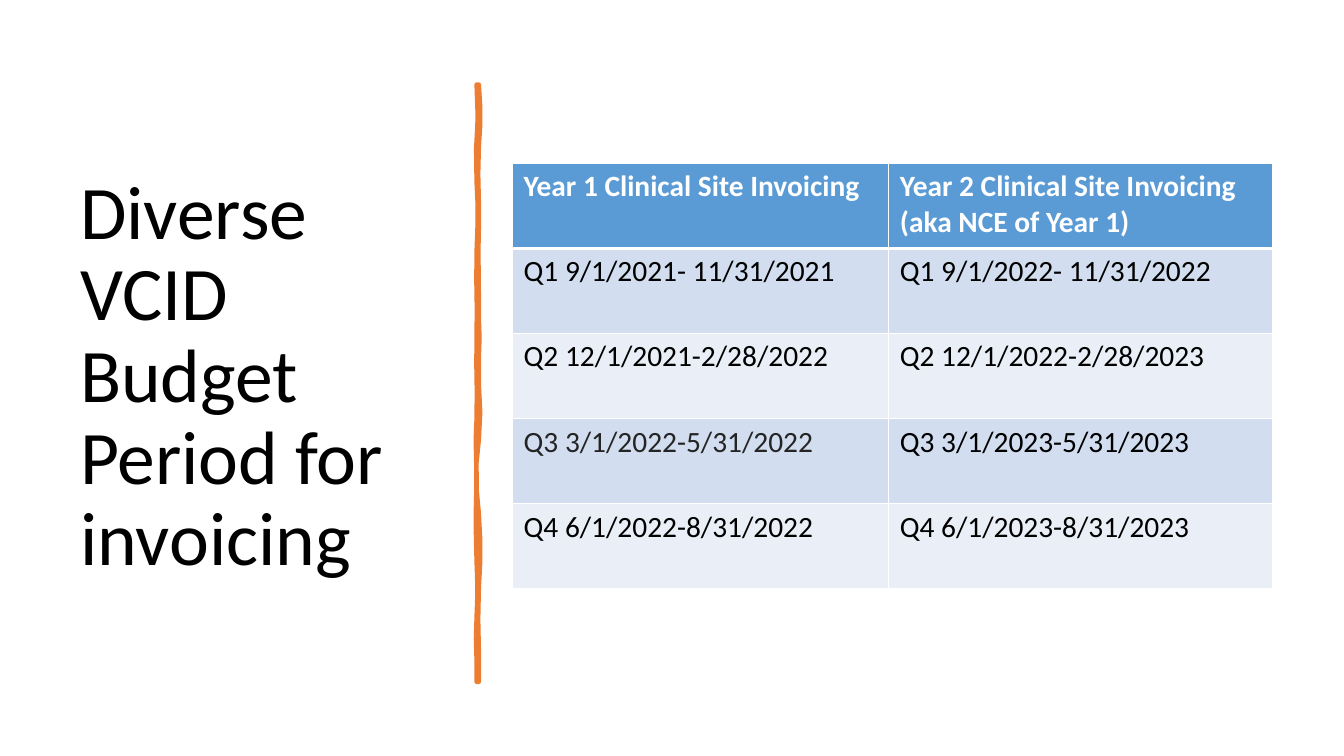
"""Build the Diverse VCID budget period slide with its invoicing calendar."""
from lxml import etree
from pptx import Presentation
from pptx.dml.color import RGBColor
from pptx.enum.text import MSO_ANCHOR
from pptx.oxml.ns import qn
from pptx.util import Pt

MIDDLE = MSO_ANCHOR.MIDDLE

THEME = {
    "font": "Calibri", "title_size": 54, "table_size": 21,
    "ink": "000000", "soft_ink": "242424", "white": "FFFFFF",
    "accent": "ED7D31", "header": "5B9BD5", "bands": ("D2DEEF", "EAEFF7"),
}

TITLE = "Diverse VCID Budget Period for invoicing"
CALENDAR = [
    ("Year 1 Clinical Site Invoicing", "Year 2 Clinical Site Invoicing (aka NCE of Year 1)"),
    ("Q1 9/1/2021- 11/31/2021", "Q1 9/1/2022- 11/31/2022"),
    ("Q2 12/1/2021-2/28/2022", "Q2 12/1/2022-2/28/2023"),
    ("Q3 3/1/2022-5/31/2022", "Q3 3/1/2023-5/31/2023"),
    ("Q4 6/1/2022-8/31/2022", "Q4 6/1/2023-8/31/2023"),
]
SOFT_CELL = (3, 0)

TITLE_BOX = (50.2, 50.1, 269.3, 439.9)
TABLE_LEFT, TABLE_TOP = 365.9, 116.7
COLUMN_WIDTHS = (268.7, 274.6)
ROW_HEIGHT = 60.75
CELL_INSETS = (8.2, 3.9)
RIGHT_EDGE, LEFT_EDGE, DIVIDER_TOP = 342, 340.5, 60.5
DIVIDER_WEIGHT = 3.25
CURVE_STEPS = 3

# Each wave is (first bend, second bend, end height).
DIVIDER_WAVES = {
    RIGHT_EDGE: [(1.4, 1.4, 105), (-1.4, 0.7, 163), (-0.7, 0, 212), (-0.7, 1.4, 256),
                 (-1.4, 2.9, 314), (-2.9, -2.2, 367), (1.4, 1.4, 420), (-1.4, 0.7, 487)],
    LEFT_EDGE: [(0.7, -1.4, 441), (0.7, 0.7, 401), (-0.7, -0.7, 343), (0, -1.4, 299),
                (0.7, -0.7, 241), (0.7, -0.7, 180), (0.7, 1.4, 130), (-2.2, 2.9, DIVIDER_TOP)],
}


def color(name):
    return RGBColor.from_string(name)


def add_run(paragraph, text, size, ink, bold=False):
    run = paragraph.add_run()
    run.text = text
    run.font.name = THEME["font"]
    run.font.size = Pt(size)
    run.font.bold = bold
    run.font.color.rgb = color(ink)


def add_title(slide):
    frame = slide.shapes.add_textbox(*map(Pt, TITLE_BOX)).text_frame
    frame.word_wrap = True
    frame.vertical_anchor = MIDDLE
    paragraph = frame.paragraphs[0]
    paragraph.line_spacing = 0.9
    add_run(paragraph, TITLE, THEME["title_size"], THEME["ink"])


def wavy_points(waves):
    points = []
    height = DIVIDER_TOP
    for edge, bends in waves.items():
        points.append((Pt(edge), Pt(height)))
        for first, second, end in bends:
            for step in range(1, CURVE_STEPS + 1):
                t = step / CURVE_STEPS
                sway = 3 * t * (1 - t) * ((1 - t) * first + t * second)
                points.append((Pt(edge + sway), Pt(height + (end - height) * t)))
            height = end
    return points


def add_divider(slide):
    start, *rest = wavy_points(DIVIDER_WAVES)
    builder = slide.shapes.build_freeform(*start)
    builder.add_line_segments(rest, close=True)
    divider = builder.convert_to_shape()
    divider.shadow.inherit = False
    divider.fill.solid()
    divider.fill.fore_color.rgb = color(THEME["accent"])
    divider.line.color.rgb = color(THEME["accent"])
    divider.line.width = Pt(DIVIDER_WEIGHT)
    etree.SubElement(divider.line._get_or_add_ln(), qn("a:round"))


def add_borders(cell, weights):
    properties = cell._tc.get_or_add_tcPr()
    for index, (side, weight) in enumerate(weights.items()):
        border = etree.Element(qn(f"a:{side}"), w=str(Pt(weight)))
        fill = etree.SubElement(border, qn("a:solidFill"))
        etree.SubElement(fill, qn("a:srgbClr"), val=THEME["white"])
        properties.insert(index, border)


def add_calendar(slide):
    rows, columns = len(CALENDAR), len(COLUMN_WIDTHS)
    calendar = slide.shapes.add_table(
        rows, columns, Pt(TABLE_LEFT), Pt(TABLE_TOP),
        Pt(sum(COLUMN_WIDTHS)), Pt(ROW_HEIGHT * rows)).table
    for column, width in zip(calendar.columns, COLUMN_WIDTHS):
        column.width = Pt(width)
    for row, labels in enumerate(CALENDAR):
        calendar.rows[row].height = Pt(ROW_HEIGHT)
        header = row == 0
        band = THEME["header"] if header else THEME["bands"][(row - 1) % 2]
        for column, label in enumerate(labels):
            cell = calendar.cell(row, column)
            cell.margin_left = cell.margin_right = Pt(CELL_INSETS[0])
            cell.margin_top = cell.margin_bottom = Pt(CELL_INSETS[1])
            cell.fill.solid()
            cell.fill.fore_color.rgb = color(band)
            add_borders(cell, {"lnL": 1, "lnR": 1, "lnT": 3 if row == 1 else 1,
                               "lnB": 3 if header else 1})
            body_ink = THEME["soft_ink"] if (row, column) == SOFT_CELL else THEME["ink"]
            add_run(cell.text_frame.paragraphs[0], label, THEME["table_size"],
                    THEME["white"] if header else body_ink, header)


def main():
    deck = Presentation()
    deck.slide_width, deck.slide_height = Pt(960), Pt(540)
    slide = deck.slides.add_slide(deck.slide_layouts[6])
    add_title(slide)
    add_divider(slide)
    add_calendar(slide)
    deck.save("out.pptx")


if __name__ == "__main__":
    main()
